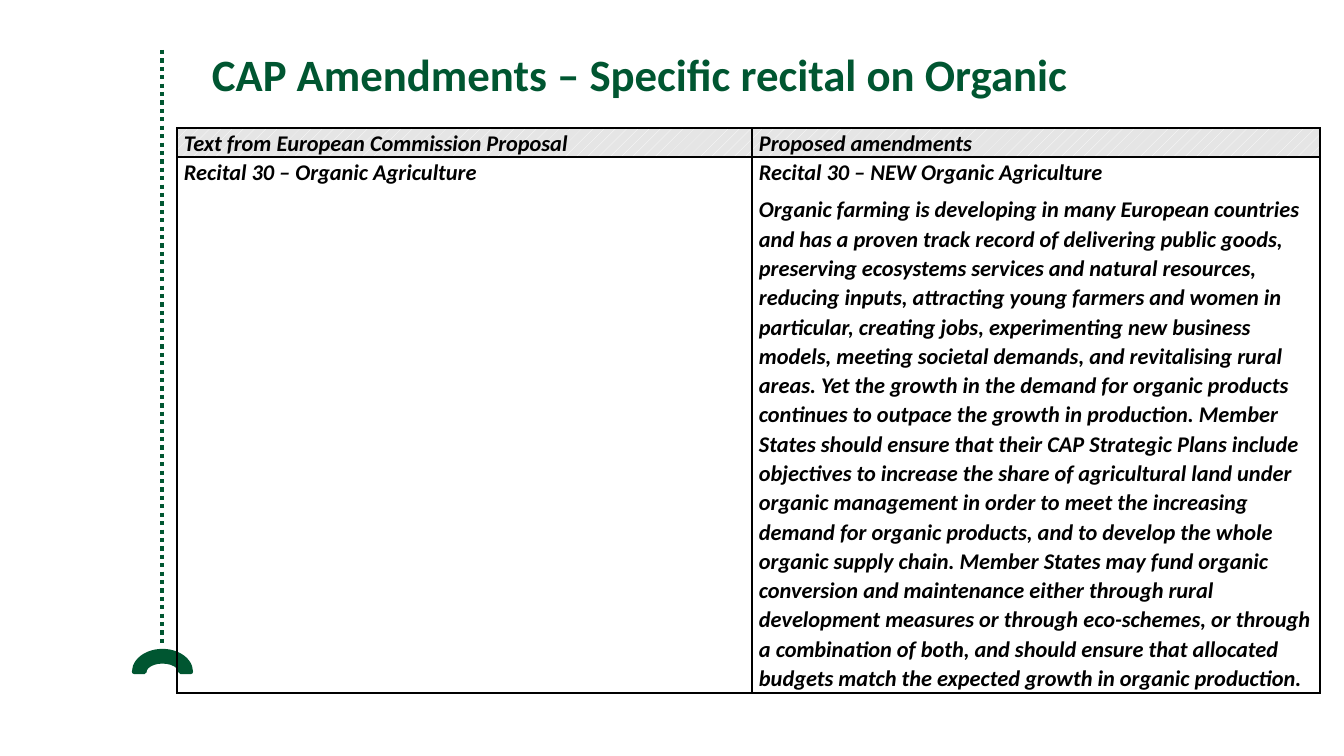
"""Builds the slide on the proposed organic recital in the CAP amendments."""
from lxml.etree import SubElement
from pptx import Presentation
from pptx.dml.color import RGBColor
from pptx.enum.dml import MSO_LINE_DASH_STYLE as Dash, MSO_PATTERN_TYPE as Pattern
from pptx.enum.shapes import MSO_CONNECTOR as Connector, MSO_SHAPE as Shape
from pptx.enum.text import MSO_ANCHOR as Anchor, PP_ALIGN as Align
from pptx.oxml import parse_xml
from pptx.oxml.ns import nsdecls, qn
from pptx.util import Pt

TITLE = "CAP Amendments – Specific recital on Organic"
HEADINGS = ["Text from European Commission Proposal", "Proposed amendments"]
AMENDMENT_SENTENCES = [
    "Organic farming is developing in many European countries and has a proven "
    "track record of delivering public goods, preserving ecosystems services and "
    "natural resources, reducing inputs, attracting young farmers and women in "
    "particular, creating jobs, experimenting new business models, meeting societal "
    "demands, and revitalising rural areas.",
    "Yet the growth in the demand for organic products continues to outpace the "
    "growth in production.",
    "Member States should ensure that their CAP Strategic Plans include objectives "
    "to increase the share of agricultural land under organic management in order to "
    "meet the increasing demand for organic products, and to develop the whole "
    "organic supply chain.",
    "Member States may fund organic conversion and maintenance either through rural "
    "development measures or through eco-schemes, or through a combination of both, "
    "and should ensure that allocated budgets match the expected growth in organic "
    "production.",
]
RECITALS = [
    ["Recital 30 – Organic Agriculture"],
    ["Recital 30 – NEW Organic Agriculture", " ".join(AMENDMENT_SENTENCES)],
]
GREEN, BLACK, WHITE, GREY = "005631", "000000", "FFFFFF", "E5E5E5"
FONT = "Calibri"
TABLE_LEFT, TABLE_TOP = 177, 128
COLUMNS, ROWS = [575, 568], [29, 536]


def px(*lengths):
    return [round(length * 914400 / 100.8) for length in lengths]


def color(value):
    return RGBColor.from_string(value)


def style(font, size, value, italic=False):
    font.name, font.size, font.bold, font.italic = FONT, Pt(size), True, italic
    font.color.rgb = color(value)


def add_title(slide):
    box = slide.shapes.add_textbox(*px(202, 42, 1119, 126))
    box.text_frame.word_wrap = True
    box.text_frame.vertical_anchor = Anchor.TOP
    para = box.text_frame.paragraphs[0]
    para.text = TITLE
    style(para.font, 32, GREEN)


def add_side_mark(slide):
    line = slide.shapes.add_connector(Connector.STRAIGHT, *px(162, 50, 162, 646))
    line.line.dash_style = Dash.ROUND_DOT
    arc = slide.shapes.add_shape(Shape.BLOCK_ARC, *px(134, 651, 57, 42))
    arc.shadow.inherit = False
    arc.fill.solid()
    arc.fill.fore_color.rgb = color(GREEN)
    for outline in (line.line, arc.line):
        outline.color.rgb = color(GREEN)
        outline.width = Pt(3)
    SubElement(line._element.spPr, qn("a:effectLst"))


def add_borders(cell):
    properties = cell._tc.get_or_add_tcPr()
    for side in "LRTB":
        properties.append(parse_xml(
            f'<a:ln{side} {nsdecls("a")} w="12700"><a:solidFill>'
            f'<a:srgbClr val="{BLACK}"/></a:solidFill></a:ln{side}>'))


def fill_cell(cell, texts, is_heading):
    add_borders(cell)
    cell.margin_left, cell.margin_right, cell.margin_top, cell.margin_bottom = px(7, 7, 0, 0)
    if is_heading:
        cell.fill.patterned()
        cell.fill.pattern = Pattern.PERCENT_10
        cell.fill.fore_color.rgb = color(WHITE)
        cell.fill.back_color.rgb = color(GREY)
    else:
        cell.fill.background()
    frame = cell.text_frame
    for index, text in enumerate(texts):
        para = frame.add_paragraph() if index else frame.paragraphs[0]
        para.text = text
        para.line_spacing = 1.07
        para.space_after = Pt(0 if index else 6)
        para.alignment = Align.LEFT if is_heading or index else Align.JUSTIFY
        style(para.font, 16, BLACK, italic=True)


def add_recital_table(slide):
    area = px(TABLE_LEFT, TABLE_TOP, sum(COLUMNS), sum(ROWS))
    table = slide.shapes.add_table(len(ROWS), len(COLUMNS), *area).table
    table.first_row = table.horz_banding = False
    for column, width in zip(table.columns, px(*COLUMNS)):
        column.width = width
    for row, height in zip(table.rows, px(*ROWS)):
        row.height = height
    for index, (heading, recital) in enumerate(zip(HEADINGS, RECITALS)):
        fill_cell(table.cell(0, index), [heading], True)
        fill_cell(table.cell(1, index), recital, False)


def main():
    deck = Presentation()
    deck.slide_width, deck.slide_height = px(1344, 756)
    slide = deck.slides.add_slide(deck.slide_layouts[6])
    add_side_mark(slide)
    add_title(slide)
    add_recital_table(slide)
    deck.save("out.pptx")


if __name__ == "__main__":
    main()
